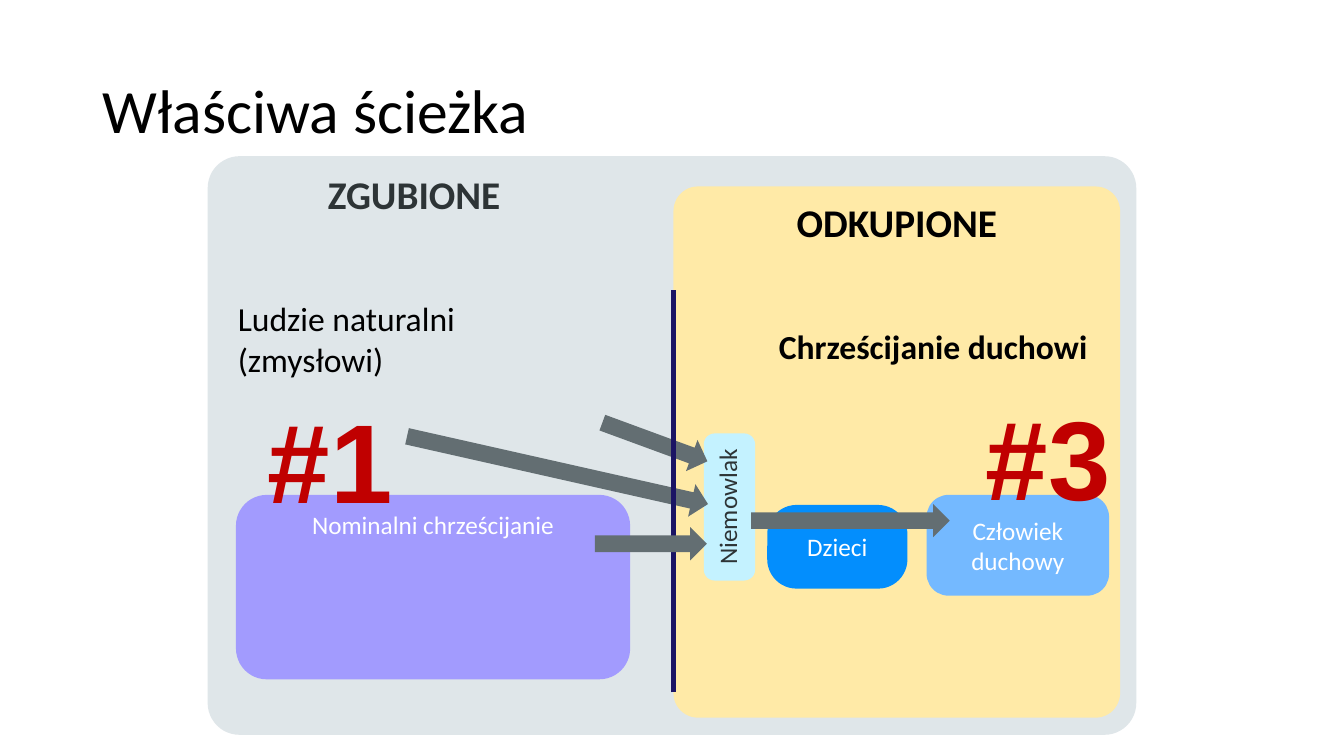
import pptx
import pptx.dml.color
import pptx.enum.shapes
import pptx.enum.text
import pptx.oxml
import pptx.util

Inches = pptx.util.Inches
Pt = pptx.util.Pt
RGB = pptx.dml.color.RGBColor
Shape = pptx.enum.shapes.MSO_SHAPE
Align = pptx.enum.text.PP_ALIGN
Anchor = pptx.enum.text.MSO_ANCHOR
Fit = pptx.enum.text.MSO_AUTO_SIZE

BLACK = RGB(0x00, 0x00, 0x00)
WHITE = RGB(0xFF, 0xFF, 0xFF)
INK = RGB(0x2D, 0x34, 0x36)
SLATE = RGB(0x63, 0x6E, 0x72)
MIST = RGB(0xDF, 0xE6, 0xE9)
CREAM = RGB(0xFF, 0xEA, 0xA7)
ICE = RGB(0xC4, 0xF2, 0xFF)
SKY = RGB(0x74, 0xB9, 0xFF)
BLUE = RGB(0x03, 0x8E, 0xFD)
LILAC = RGB(0xA2, 0x9B, 0xFE)
NAVY = RGB(0x1B, 0x14, 0x64)
RED = RGB(0xC0, 0x00, 0x00)


class Board:
    font = "Calibri"

    def __init__(self, deck):
        self.slide = deck.slides.add_slide(deck.slide_layouts[5])
        self.shapes = self.slide.shapes

    def text(self, shape, text, size, color, bold=False, font=None,
             align=Align.LEFT, **frame):
        body = shape.text_frame
        body.text = text
        look = {"word_wrap": True, "auto_size": Fit.NONE,
                "vertical_anchor": Anchor.TOP, **frame}
        for name, value in look.items():
            setattr(body, name, value)
        look = {"size": Pt(size), "bold": bold, "name": font or self.font}
        for line in body.paragraphs:
            line.alignment = align
            for run in line.runs:
                for name, value in look.items():
                    setattr(run.font, name, value)
                run.font.color.rgb = color

    def title(self, box, text):
        head = self.shapes.title
        for name, value in zip(("left", "top", "width", "height"), box):
            setattr(head, name, Inches(value))
        self.text(head, text, 44, BLACK, vertical_anchor=Anchor.MIDDLE)
        head.text_frame.paragraphs[0].line_spacing = 0.9

    def shape(self, kind, box, fill):
        item = self.shapes.add_shape(kind, *map(Inches, box))
        item.shadow.inherit = False
        item.line.fill.background()
        if fill is None:
            item.fill.background()
        else:
            item.fill.solid()
            item.fill.fore_color.rgb = fill
        return item

    def card(self, box, fill, round, text, size, color, **style):
        item = self.shape(Shape.ROUNDED_RECTANGLE, box, fill)
        item.adjustments[0] = round
        self.text(item, text, size, color, **style)
        return item

    def label(self, box, text, size, color, **style):
        item = self.shapes.add_textbox(*map(Inches, box))
        self.text(item, text, size, color, **style)

    def arrow(self, left, top, width, turn=0):
        item = self.shape(Shape.RIGHT_ARROW, (left, top, width, 0.33), SLATE)
        item.rotation = turn

    def line(self, ends, color, width):
        item = self.shapes.add_connector(
            pptx.enum.shapes.MSO_CONNECTOR.STRAIGHT, *map(Inches, ends))
        item.line.color.rgb = color
        item.line.width = Pt(width)
        item.element.spPr.append(pptx.oxml.parse_xml(
            '<a:effectLst xmlns:a='
            '"http://schemas.openxmlformats.org/drawingml/2006/main"/>'))


def main():
    deck = pptx.Presentation()
    deck.slide_width = Inches(13.33)
    deck.slide_height = Inches(7.5)
    board = Board(deck)
    mid = {"align": Align.CENTER}
    core = {**mid, "vertical_anchor": Anchor.MIDDLE}
    mark = {"bold": True, "font": "Arial"}

    board.title((0.92, 0.4, 11.5, 1.45), "Właściwa ścieżka")
    board.card((2.06, 1.55, 9.21, 5.74), MIST, 0.055, "ZGUBIONE", 28, INK,
               bold=True, margin_left=Inches(1.1))
    board.card((6.68, 1.85, 4.43, 5.27), CREAM, 0.055, "ODKUPIONE", 28, BLACK,
               bold=True, **mid)
    baby = board.card((6.98, 4.3, 0.51, 1.46), ICE, 0.214, "Niemowlak", 18,
                      INK, **mid)
    baby.element.txBody.bodyPr.set("vert", "vert270")
    board.card((9.19, 4.91, 1.81, 1), SKY, 0.218, "Człowiek\vduchowy", 18,
               WHITE, **core)
    board.card((7.61, 5.01, 1.39, 0.83), BLUE, 0.35, "Dzieci", 18, WHITE,
               **core)

    board.arrow(5.94, 4.22, 1.11, 20.2)
    board.arrow(7.45, 5, 1.97)
    board.arrow(4, 4.5, 3.06, 12.7)
    board.line((6.68, 6.87, 6.68, 2.88), NAVY, 3)
    board.card((2.34, 4.91, 3.91, 1.83), LILAC, 0.167,
               "Nominalni chrześcijanie", 18, WHITE, **mid)
    board.arrow(5.9, 5.23, 1.11)

    board.label((2.56, 3.83, 1.73, 1.45), "#1", 80, RED, **mark)
    board.label((2.26, 2.91, 3.39, 1.31), "Ludzie naturalni (zmysłowi)", 24,
                BLACK)
    board.card((7.59, 3.15, 3.59, 0.57), None, 0.218, "Chrześcijanie duchowi",
               24, BLACK, bold=True)
    board.label((9.68, 3.81, 1.73, 1.45), "#3", 80, RED, **mark)
    deck.save("out.pptx")


if __name__ == "__main__":
    main()
